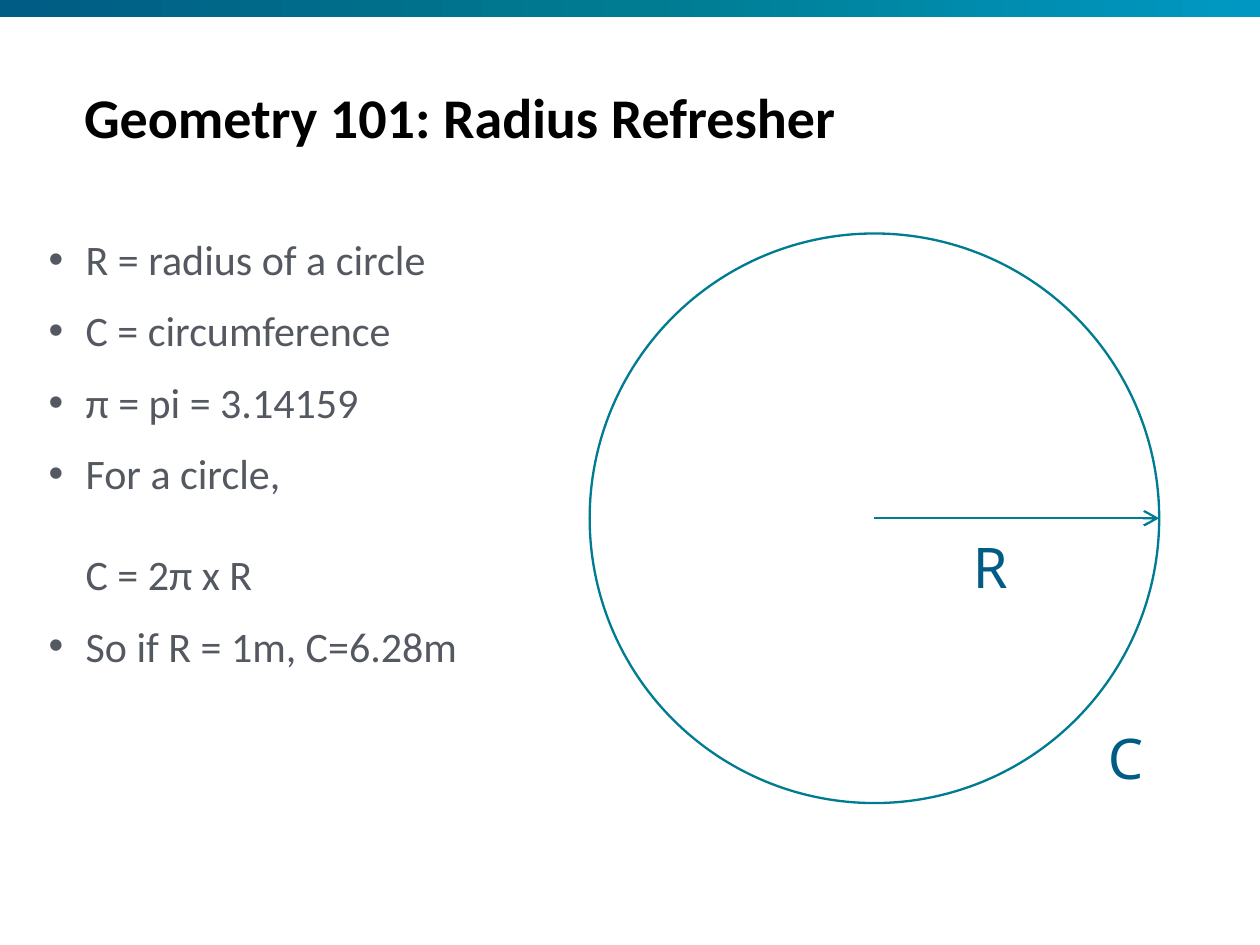
from dataclasses import dataclass

from lxml.etree import SubElement
from pptx import Presentation
from pptx.dml.color import RGBColor
from pptx.enum.shapes import MSO_CONNECTOR, MSO_SHAPE
from pptx.enum.text import MSO_ANCHOR, MSO_AUTO_SIZE, PP_ALIGN
from pptx.oxml.ns import qn
from pptx.util import Inches, Pt


@dataclass(frozen=True)
class Theme:
    navy: str = "005C84"
    teal: str = "007C92"
    sky: str = "0098C3"
    black: str = "000000"
    gray: str = "545861"
    text_font: str = "Calibri"
    bullet_font: str = "Arial"
    label_font: str = "Noto Sans"
    title_size: int = 24
    body_size: int = 18
    label_size: int = 24
    line_width: int = 1


class SlideBuilder:
    def __init__(self, slide, theme):
        self.shapes = slide.shapes
        self.theme = theme

    def bar(self, x, y, w, h, stops):
        """Draw a left-to-right gradient bar; stops are (percent, colour)."""
        sp = self.shapes.add_shape(MSO_SHAPE.RECTANGLE, Inches(x), Inches(y), Inches(w), Inches(h))
        sp.shadow.inherit = False
        sp.line.fill.background()
        sp.fill.gradient()
        sp.fill.gradient_angle = 0
        stop_list = next(sp._element.iter(qn("a:gsLst")))
        for stop in list(stop_list):
            stop_list.remove(stop)
        for percent, color in stops:
            gs = SubElement(stop_list, qn("a:gs"), pos=str(percent * 1000))
            SubElement(gs, qn("a:srgbClr"), val=color)

    def frame(self, x, y, w, h):
        """Add a top-anchored text box without insets."""
        tf = self.shapes.add_textbox(Inches(x), Inches(y), Inches(w), Inches(h)).text_frame
        tf.margin_left = tf.margin_right = tf.margin_top = tf.margin_bottom = 0
        tf.vertical_anchor = MSO_ANCHOR.TOP
        tf.word_wrap = True
        return tf

    def style(self, p, font, size, color, bold=False):
        for r in p.runs:
            r.font.name = font
            r.font.size = Pt(size)
            r.font.bold = bold
            r.font.color.rgb = RGBColor.from_string(color)

    def title(self, text, x, y, w, h):
        tf = self.frame(x, y, w, h)
        tf.text = text
        self.style(tf.paragraphs[0], self.theme.text_font, self.theme.title_size, self.theme.black, True)

    def bullets(self, items, x, y, w, h):
        tf = self.frame(x, y, w, h)
        for i, item in enumerate(items):
            p = tf.add_paragraph() if i else tf.paragraphs[0]
            p.text = item
            p.font.size = Pt(self.theme.body_size)
            p.space_before = Pt(9)
            self.style(p, self.theme.text_font, self.theme.body_size, self.theme.gray)
            pPr = p._p.get_or_add_pPr()
            pPr.set("marL", str(Inches(0.22)))
            pPr.set("indent", str(-Inches(0.22)))
            for tag, attrs in (("a:buFont", {"typeface": self.theme.bullet_font}), ("a:buChar", {"char": "•"})):
                pPr.insert_element_before(pPr.makeelement(qn(tag), attrs), "a:tabLst", "a:defRPr", "a:extLst")

    def stroke(self, line):
        line.color.rgb = RGBColor.from_string(self.theme.teal)
        line.width = Pt(self.theme.line_width)

    def circle(self, x, y, diameter):
        sp = self.shapes.add_shape(MSO_SHAPE.OVAL, Inches(x), Inches(y), Inches(diameter), Inches(diameter))
        sp.shadow.inherit = False
        sp.fill.background()
        self.stroke(sp.line)

    def arrow(self, x1, y1, x2, y2):
        cxn = self.shapes.add_connector(MSO_CONNECTOR.STRAIGHT, Inches(x1), Inches(y1), Inches(x2), Inches(y2))
        self.stroke(cxn.line)
        SubElement(cxn.line._get_or_add_ln(), qn("a:tailEnd"), type="arrow")
        SubElement(cxn._element.spPr, qn("a:effectLst"))

    def label(self, text, x, y, w, h):
        tf = self.shapes.add_textbox(Inches(x), Inches(y), Inches(w), Inches(h)).text_frame
        tf.word_wrap = False
        tf.auto_size = MSO_AUTO_SIZE.SHAPE_TO_FIT_TEXT
        tf.text = text
        p = tf.paragraphs[0]
        p.alignment = PP_ALIGN.CENTER
        self.style(p, self.theme.label_font, self.theme.label_size, self.theme.navy)


def main():
    prs = Presentation()
    width = 7.5
    prs.slide_width, prs.slide_height = Inches(width), Inches(width * 3 / 4)
    theme = Theme()
    s = SlideBuilder(prs.slides.add_slide(prs.slide_layouts[6]), theme)

    s.bar(0, 0, width, 0.1, [(0, theme.navy), (51, theme.teal), (100, theme.sky)])
    s.title("Geometry 101: Radius Refresher", 0.5, 0.49, 5.55, 0.79)
    s.bullets(
        [
            "R = radius of a circle",
            "C = circumference",
            "π = pi = 3.14159",
            "For a circle,\v\vC = 2π x R",
            "So if R = 1m, C=6.28m",
        ],
        0.29, 1.39, 3.87, 3.69,
    )

    left, top, diameter = 3.51, 1.39, 3.39
    radius = diameter / 2
    s.circle(left, top, diameter)
    s.arrow(left + radius, top + radius, left + diameter, top + radius)
    s.label("R", 5.69, 3.12, 0.41, 0.5)
    s.label("C", 6.48, 4.26, 0.44, 0.5)

    prs.save("out.pptx")


if __name__ == "__main__":
    main()
